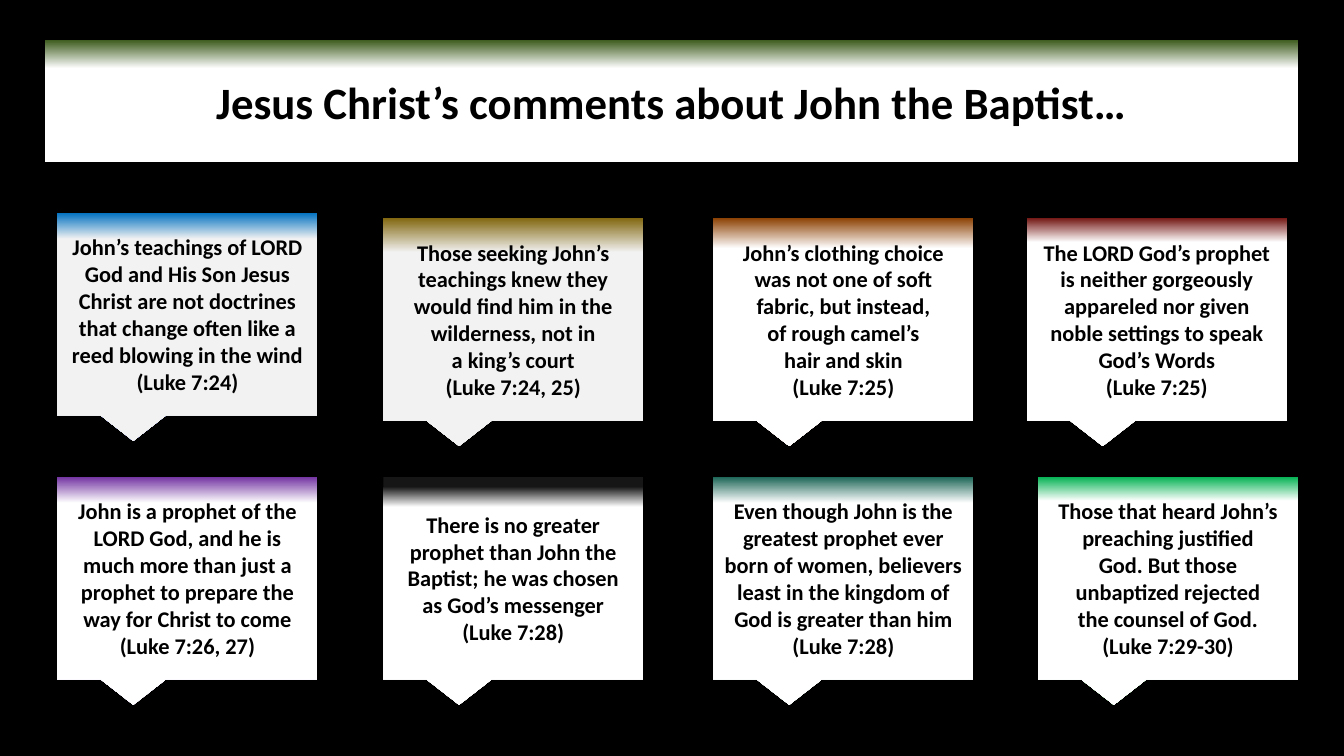
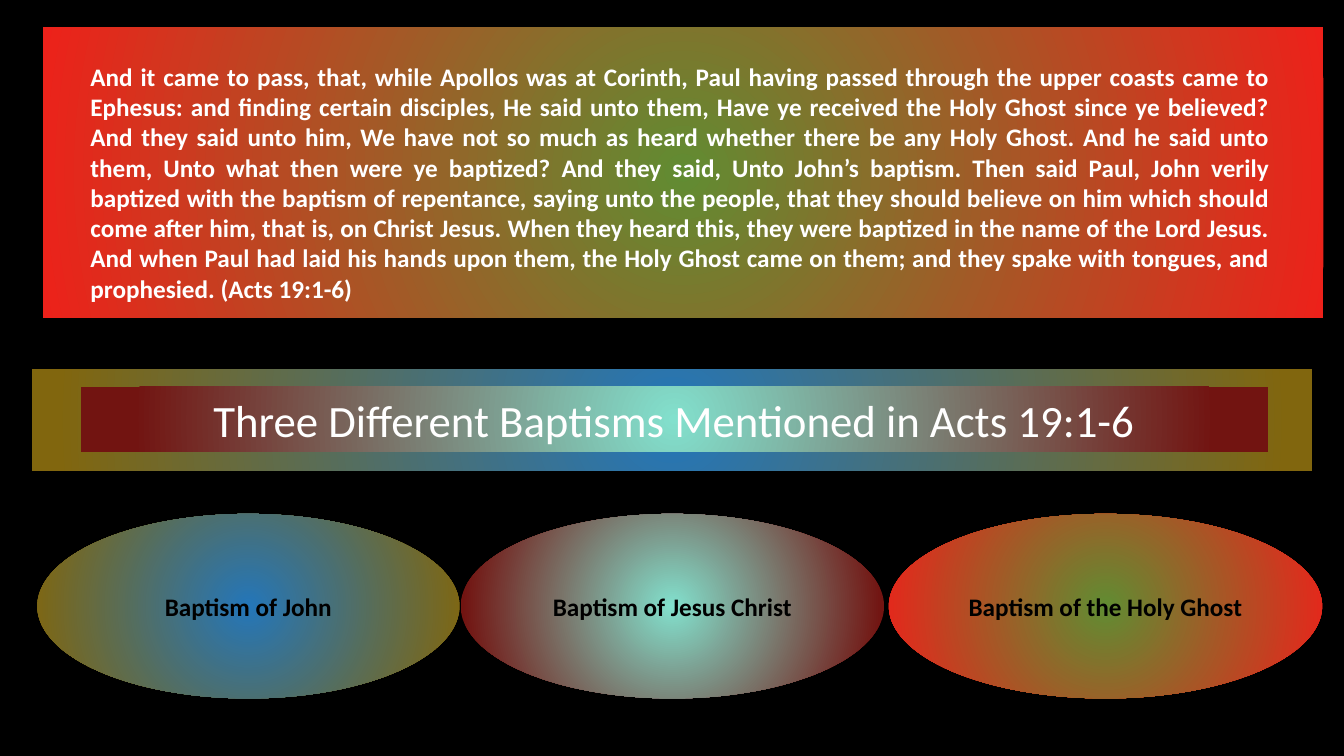
from dataclasses import dataclass

from lxml import etree
from pptx import Presentation
from pptx.dml.color import RGBColor
from pptx.enum.shapes import MSO_SHAPE
from pptx.enum.text import MSO_ANCHOR, MSO_AUTO_SIZE, PP_ALIGN
from pptx.oxml.ns import qn
from pptx.util import Cm, Pt


@dataclass(frozen=True)
class Theme:
    font: str = "Calibri"
    black: str = "000000"
    white: str = "FFFFFF"
    pale: str = "F2F2F2"
    title_size: int = 32
    body_size: int = 18
    callout_size: int = 16
    # Each gradient is two (position in percent, colour) stops
    title_fade: tuple = ((0, "405E21"), (23, "FFFFFF"))
    john: tuple = ((0, "2476B9"), (96, "81660E"))
    christ: tuple = ((0, "82E0CD"), (91, "721411"))
    ghost: tuple = ((0, "618C32"), (100, "ED211A"))


THEME = Theme()

# Content: comments as (left, top, (fade start, colour), (fade end, colour), paragraphs)
COMMENTS_TITLE = "Jesus Christ’s comments about John the Baptist…"
CALLOUT_SIZE = (6.55, 5.11)
UPPER, LOWER = 5.49, 12.01
COLUMNS = (1.45, 9.66, 17.98, 25.88)
COMMENTS = [
    (COLUMNS[0], 5.36, (0, "0070C0"), (13, THEME.pale),
     ["John’s teachings of LORD God and His Son Jesus Christ are not doctrines "
      "that change often like a reed blowing in the wind", "(Luke 7:24)"]),
    (COLUMNS[1], UPPER, (0, "81660E"), (17, THEME.pale),
     ["Those seeking John’s teachings knew they would find him in the wilderness, not in",
      "a king’s court", "(Luke 7:24, 25)"]),
    (COLUMNS[2], UPPER, (0, "8B3F01"), (15, THEME.white),
     ["John’s clothing choice was not one of soft fabric, but instead,",
      "of rough camel’s", "hair and skin", "(Luke 7:25)"]),
    (COLUMNS[3], UPPER, (0, "721411"), (12, THEME.white),
     ["The LORD God’s prophet is neither gorgeously appareled nor given noble "
      "settings to speak God’s Words", "(Luke 7:25)"]),
    (COLUMNS[0], LOWER, (0, "7030A0"), (13, THEME.white),
     ["John is a prophet of the LORD God, and he is much more than just a prophet "
      "to prepare the way for Christ to come (Luke 7:26, 27)"]),
    (COLUMNS[1], LOWER, (5, "161616"), (15, THEME.white),
     ["There is no greater prophet than John the Baptist; he was chosen",
      "as God’s messenger", "(Luke 7:28)"]),
    (COLUMNS[2], LOWER, (0, "196354"), (13, THEME.white),
     ["Even though John is the greatest prophet ever born of women, believers least "
      "in the kingdom of God is greater than him", "(Luke 7:28)"]),
    (26.16, LOWER, (0, "00B050"), (12, THEME.white),
     ["Those that heard John’s preaching justified", "God. But those unbaptized rejected",
      "the counsel of God.", "(Luke 7:29-30)"]),
]

BAPTISMS_TITLE = "Three Different Baptisms Mentioned in Acts 19:1-6"
PASSAGE = (
    "And it came to pass, that, while Apollos was at Corinth, Paul having passed through "
    "the upper coasts came to Ephesus: and finding certain disciples, He said unto them, "
    "Have ye received the Holy Ghost since ye believed? And they said unto him, We have not "
    "so much as heard whether there be any Holy Ghost. And he said unto them, Unto what then "
    "were ye baptized? And they said, Unto John’s baptism. Then said Paul, John verily "
    "baptized with the baptism of repentance, saying unto the people, that they should "
    "believe on him which should come after him, that is, on Christ Jesus. When they heard "
    "this, they were baptized in the name of the Lord Jesus. And when Paul had laid his hands "
    "upon them, the Holy Ghost came on them; and they spake with tongues, and prophesied. "
    "(Acts 19:1-6)"
)
# Baptisms as (left, width, gradient, label)
BAPTISMS = [
    (0.94, 10.64, THEME.john, "Baptism of John"),
    (11.61, 10.67, THEME.christ, "Baptism of Jesus Christ"),
    (22.4, 10.92, THEME.ghost, "Baptism of the Holy Ghost"),
]


def write(shape, paragraphs, size, color=THEME.black, bold=True,
          align=PP_ALIGN.CENTER, anchor=MSO_ANCHOR.MIDDLE):
    frame = shape.text_frame
    frame.word_wrap = True
    frame.auto_size = MSO_AUTO_SIZE.NONE
    frame.vertical_anchor = anchor
    for index, text in enumerate(paragraphs):
        paragraph = frame.add_paragraph() if index else frame.paragraphs[0]
        paragraph.alignment = align
        run = paragraph.add_run()
        run.text = text
        font = run.font
        font.name, font.size, font.bold = THEME.font, Pt(size), bold
        font.color.rgb = RGBColor.from_string(color)


def paint(shape, stops, radial=False):
    """Fill with a gradient running downwards, or outwards from the centre."""
    shape.fill.gradient()
    for stop, (percent, color) in zip(shape.fill.gradient_stops, stops):
        stop.position = percent / 100
        stop.color.rgb = RGBColor.from_string(color)
    if radial:
        gradient = shape.element.spPr.find(qn("a:gradFill"))
        gradient.remove(gradient.find(qn("a:lin")))
        circle = etree.SubElement(gradient, qn("a:path"), {"path": "circle"})
        etree.SubElement(circle, qn("a:fillToRect"), dict.fromkeys("ltrb", "50000"))
    else:
        shape.fill.gradient_angle = 270


def add_block(slide, kind, box, stops, radial=False):
    shape = slide.shapes.add_shape(kind, *map(Cm, box))
    shape.shadow.inherit = False
    shape.line.fill.background()
    paint(shape, stops, radial)
    return shape


def place_title(slide, text, box, stops, radial=False, **text_format):
    title = slide.shapes.title
    title.left, title.top, title.width, title.height = map(Cm, box)
    paint(title, stops, radial)
    write(title, [text], THEME.title_size, **text_format)
    return title


def build_comments(slide):
    place_title(slide, COMMENTS_TITLE, (1.14, 1.02, 31.57, 3.07), THEME.title_fade)
    for left, top, start, end, paragraphs in COMMENTS:
        callout = add_block(slide, MSO_SHAPE.RECTANGULAR_CALLOUT,
                            (left, top, *CALLOUT_SIZE), (start, end))
        write(callout, paragraphs, THEME.callout_size)


def build_baptisms(slide):
    # Scripture passage on its panel
    add_block(slide, MSO_SHAPE.RECTANGLE, (1.09, 0.69, 32.26, 7.32), THEME.ghost, radial=True)
    passage = slide.shapes.add_textbox(*map(Cm, (2.03, 1.42, 30.23, 6.4)))
    write(passage, [PASSAGE], THEME.body_size, color=THEME.white,
          align=PP_ALIGN.JUSTIFY, anchor=MSO_ANCHOR.TOP)

    # Title in front of its band
    band = add_block(slide, MSO_SHAPE.RECTANGLE, (0.81, 9.3, 32.26, 2.57),
                     THEME.john, radial=True)
    title = place_title(slide, BAPTISMS_TITLE, (2.03, 9.75, 29.92, 1.63), THEME.christ,
                        radial=True, color=THEME.white, bold=False)
    band.element.addnext(title.element)

    # The three baptisms
    for left, width, stops, label in BAPTISMS:
        baptism = add_block(slide, MSO_SHAPE.OVAL, (left, 12.95, width, 4.65),
                            stops, radial=True)
        write(baptism, [label], THEME.body_size)


def main():
    deck = Presentation()
    deck.slide_width, deck.slide_height = Cm(33.87), Cm(19.05)
    backdrop = deck.slide_master.background.fill
    backdrop.solid()
    backdrop.fore_color.rgb = RGBColor.from_string(THEME.black)
    title_only = deck.slide_layouts[5]
    for build in (build_comments, build_baptisms):
        build(deck.slides.add_slide(title_only))
    deck.save("out.pptx")


if __name__ == "__main__":
    main()
